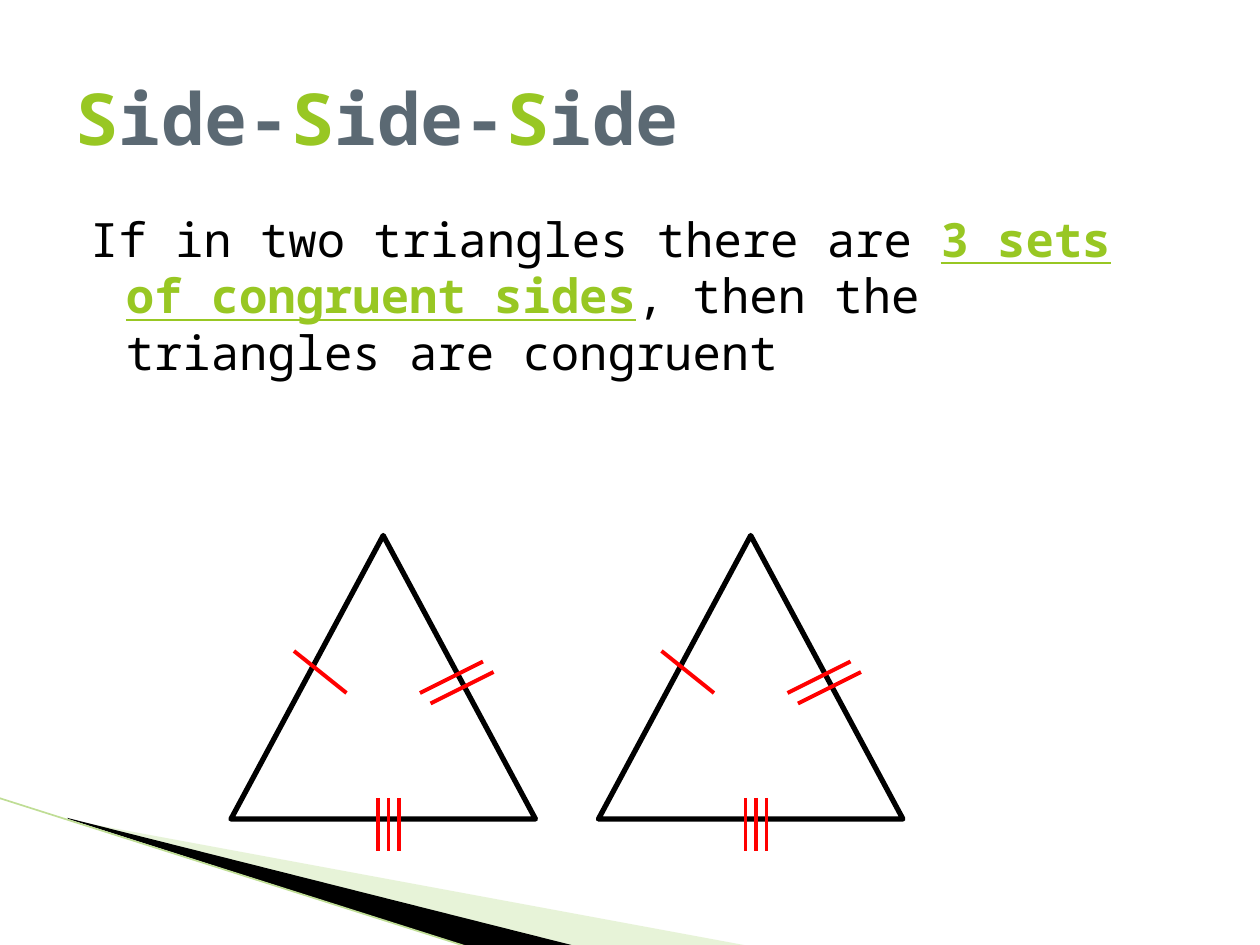
"""Build the Side-Side-Side triangle congruence slide."""
from dataclasses import dataclass
from lxml import etree
from pptx import Presentation
from pptx import util as u
from pptx.dml.color import RGBColor
from pptx.enum import shapes, text
from pptx.oxml import ns

PX = 7620


@dataclass(frozen=True)
class Theme:
    font: str = "Noto Sans Mono"
    green: str = "98C723"
    slate: str = "5B6973"
    black: str = "000000"
    red: str = "FF0000"
    pale: str = "C5E19F"
    edge: str = "BFDD95"
    head: int = 41
    body: int = 27


look = Theme()


def write(para, words, color, size, bold=False, under=False):
    run = para.add_run()
    run.text = words
    font = run.font
    font.name, font.size = look.font, u.Pt(size)
    font.bold, font.underline = bold, under
    font.color.rgb = RGBColor.from_string(color)


def draw(ends, color, width):
    line = slide.shapes.add_connector(
        shapes.MSO_CONNECTOR.STRAIGHT, *[n * PX for n in ends])
    line.line.color.rgb = RGBColor.from_string(color)
    line.line.width = u.Pt(width)
    etree.SubElement(line._element.spPr, ns.qn("a:effectLst"))


deck = Presentation()
deck.slide_width, deck.slide_height = 1200 * PX, 900 * PX
slide = deck.slides.add_slide(deck.slide_layouts[5])

wedges = [
    (look.pale, 40, [(66, 781), (714, 901), (547, 901), (66, 780)]),
    (look.black, 100, [(64, 779), (548, 901), (446, 902), (65, 780)]),
]
for color, alpha, points in wedges:
    path = slide.shapes.build_freeform(*points[0], scale=PX)
    path.add_line_segments(points[1:], close=True)
    wedge = path.convert_to_shape()
    wedge.shadow.inherit = False
    wedge.fill.solid()
    wedge.fill.fore_color.rgb = RGBColor.from_string(color)
    wedge.line.fill.background()
    if alpha < 100:
        tint = wedge._element.spPr.find(".//" + ns.qn("a:srgbClr"))
        etree.SubElement(tint, ns.qn("a:alpha"), val=str(alpha * 1000))
draw((-1, 760, 446, 902), look.edge, 0.95)

title = slide.shapes.title
title.left, title.top, title.width, title.height = [
    n * PX for n in (60, 36, 1080, 150)]
title.text_frame.vertical_anchor = text.MSO_ANCHOR.MIDDLE
para = title.text_frame.paragraphs[0]
para.alignment = text.PP_ALIGN.LEFT
for rest in ("ide-", "ide-", "ide"):
    write(para, "S", look.green, look.head, bold=True)
    write(para, rest, look.slate, look.head, bold=True)

body = slide.shapes.add_textbox(*[n * PX for n in (60, 194, 1080, 594)])
body.text_frame.word_wrap = True
para = body.text_frame.paragraphs[0]
props = para._p.get_or_add_pPr()
props.set("marL", str(48 * PX))
props.set("indent", str(-34 * PX))
write(para, "If in two triangles there are ", look.black, look.body)
write(para, "3 sets of congruent sides", look.green, look.body, True, True)
write(para, ", then the triangles are congruent", look.black, look.body)

ticks = [(60, 110, 110, 150)]
ticks += [(180 + n, 150 + n, 240 + n, 120 + n) for n in (0, 10)]
ticks += [(n, 250, n, 300) for n in (140, 150, 160)]
top = 510
for left in (220, 570):
    side = slide.shapes.add_shape(
        shapes.MSO_SHAPE.ISOSCELES_TRIANGLE,
        *[n * PX for n in (left, top, 290, 270)])
    side.shadow.inherit = False
    side.fill.background()
    side.line.color.rgb = RGBColor.from_string(look.black)
    side.line.width = u.Pt(3)
    for x1, y1, x2, y2 in ticks:
        draw((left + x1, top + y1, left + x2, top + y2), look.red, 2.25)

deck.save("out.pptx")
